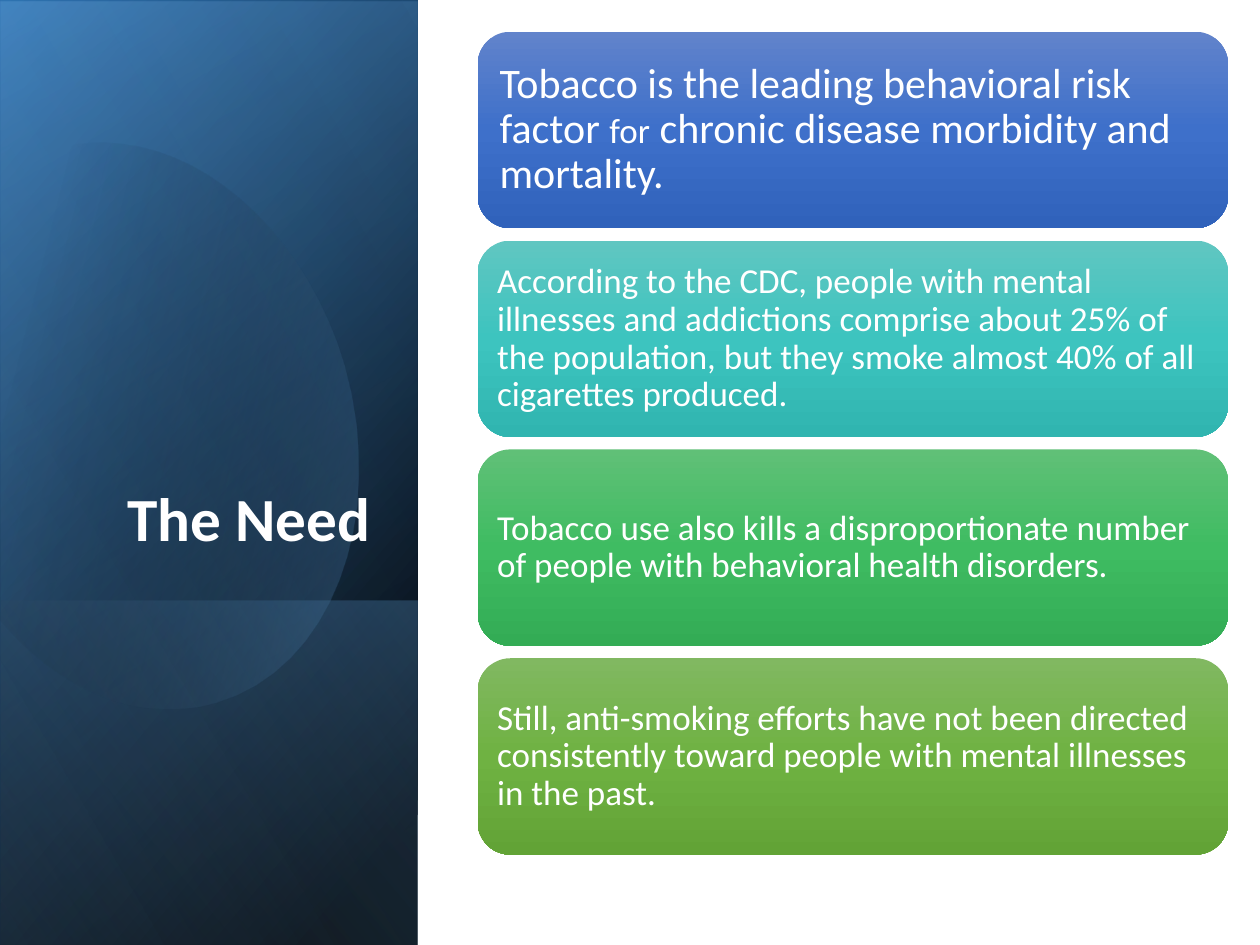
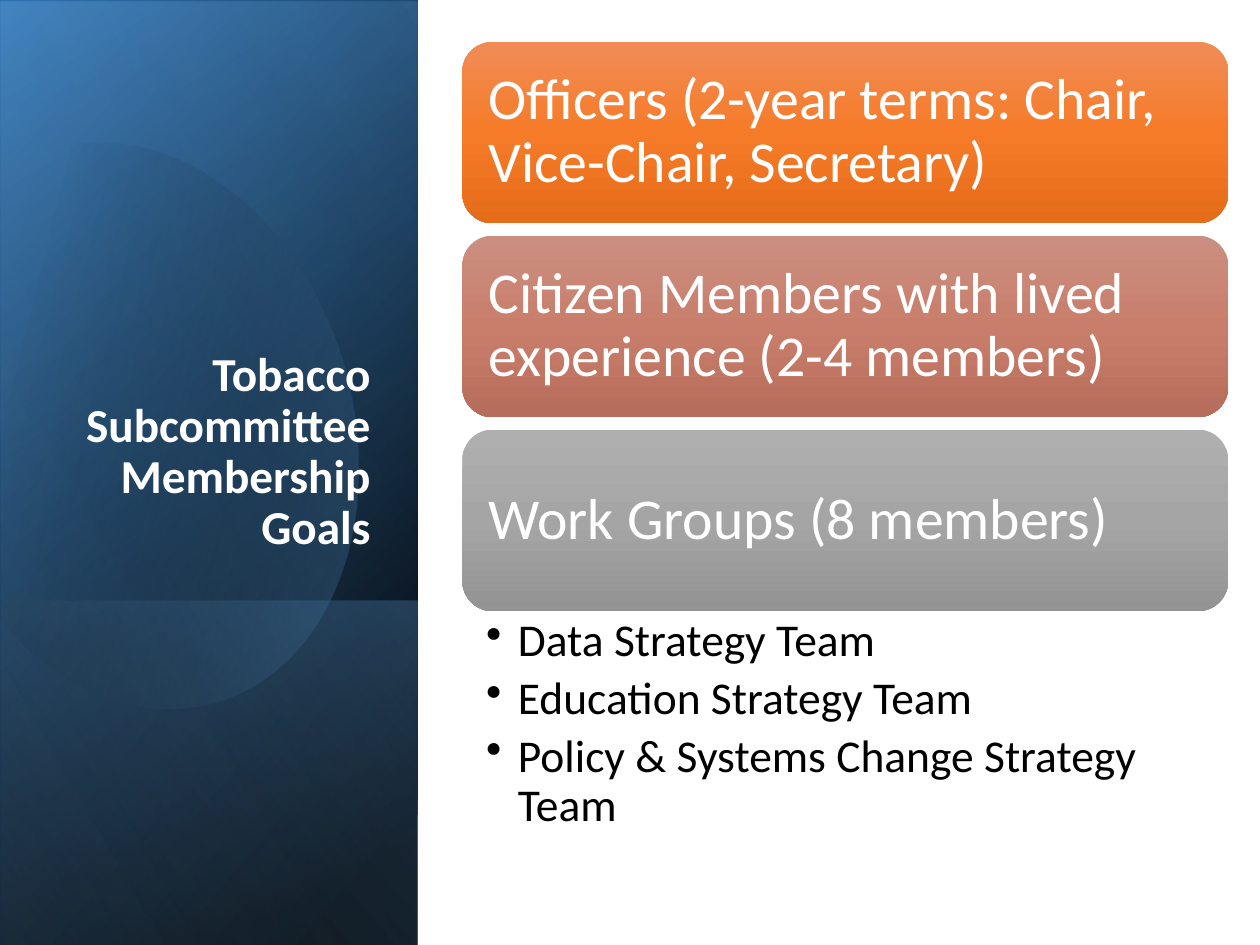
from math import cos, radians, sin

from lxml import etree
from pptx import Presentation
from pptx.dml.color import RGBColor
from pptx.enum.shapes import MSO_SHAPE
from pptx.enum.text import MSO_ANCHOR, PP_ALIGN
from pptx.oxml.ns import qn
from pptx.util import Cm, Pt

RECTANGLE, ROUNDED = MSO_SHAPE.RECTANGLE, MSO_SHAPE.ROUNDED_RECTANGLE
TOP, MIDDLE, BOTTOM = MSO_ANCHOR.TOP, MSO_ANCHOR.MIDDLE, MSO_ANCHOR.BOTTOM
LEFT, RIGHT = PP_ALIGN.LEFT, PP_ALIGN.RIGHT

FONT = "Calibri"
BLACK = RGBColor(0x00, 0x00, 0x00)
WHITE = RGBColor(0xFF, 0xFF, 0xFF)
DEEP_BLUE = RGBColor(0x2E, 0x75, 0xB6)
BLUE = RGBColor(0x5B, 0x9B, 0xD5)
PALE_BLUE = RGBColor(0x9D, 0xC3, 0xE6)

# Card colours: top, middle, bottom
ROYAL = RGBColor(0x61, 0x83, 0xCB), RGBColor(0x3E, 0x70, 0xCA), RGBColor(0x30, 0x62, 0xBB)
TEAL = RGBColor(0x60, 0xC6, 0xC1), RGBColor(0x3D, 0xC4, 0xBF), RGBColor(0x30, 0xB5, 0xB0)
GREEN = RGBColor(0x60, 0xC0, 0x77), RGBColor(0x3F, 0xBC, 0x62), RGBColor(0x33, 0xAC, 0x55)
OLIVE = RGBColor(0x81, 0xB8, 0x61), RGBColor(0x6F, 0xB2, 0x42), RGBColor(0x62, 0xA3, 0x36)
ORANGE = RGBColor(0xF1, 0x8C, 0x57), RGBColor(0xF6, 0x7B, 0x28), RGBColor(0xE5, 0x6C, 0x19)
ROSE = RGBColor(0xCB, 0x8F, 0x81), RGBColor(0xC9, 0x7E, 0x6B), RGBColor(0xB7, 0x6D, 0x5B)
GREY = RGBColor(0xAF, 0xAF, 0xAF), RGBColor(0xA5, 0xA5, 0xA5), RGBColor(0x93, 0x93, 0x93)

# Content: a card's text is a list of (words, size) runs; lengths are in cm
SLIDES = [
    dict(
        title="The Need", title_size=35,
        left=9.63, top=0.64, height=3.96,
        cards=[
            (ROYAL, 0.25, [("Tobacco is the leading behavioral risk factor ", 24), ("for", 20),
                           (" chronic disease morbidity and mortality.", 24)]),
            (TEAL, 0.2, [("According to the CDC, people with mental illnesses and addictions "
                          "comprise about 25% of the population, but they smoke almost 40% "
                          "of all cigarettes produced.", 20)]),
            (GREEN, 0.2, [("Tobacco use also kills a disproportionate number of people with "
                           "behavioral health disorders.", 20)]),
            (OLIVE, 0.2, [("Still, anti-smoking efforts have not been directed consistently "
                           "toward people with mental illnesses in the past.", 20)]),
        ],
        bullets=[],
    ),
    dict(
        title="Tobacco Subcommittee Membership Goals", title_size=27,
        left=9.32, top=0.84, height=3.66,
        cards=[
            (ORANGE, 0.35, [("Officers (2-year terms: Chair, Vice-Chair, Secretary)", 33)]),
            (ROSE, 0.35, [("Citizen Members with lived experience (2-4 members)", 33)]),
            (GREY, 0.35, [("Work Groups (8 members)", 33)]),
        ],
        bullets=["Data Strategy Team", "Education Strategy Team",
                 "Policy & Systems Change Strategy Team"],
    ),
]

# Side panel: box, gradient angle, stops of (position, colour, opacity) in percent
FULL_PANEL = (-5.31, 5.31, 19.05, 8.41)
PANEL_LAYERS = [
    (FULL_PANEL, 50, [(8, BLACK, 100), (100, DEEP_BLUE, 100)]),
    ((-5.31, 5.36, 19.05, 8.41), 30, [(0, BLACK, 0), (99, BLUE, 46)]),
    ((0.74, 11.38, 6.96, 8.41), 130, [(2, BLUE, 29), (100, BLACK, 30)]),
]
PANEL_GLAZE = (FULL_PANEL, 120, [(0, BLACK, 0), (99, PALE_BLUE, 11)])

# Oval outline: one point is a straight line, three points are a curve
OVAL_STOPS = [(29, BLACK, 0), (100, BLUE, 43)]
OVAL_TURN = 343.9
OVAL_CENTRE = (3.02, 8.5)
OVAL_START = (2.44, 2.9)
OVAL_SEGMENTS = [
    [(4.34, 3.1), (6.2, 4.88), (6.93, 7.37)],
    [(7.8, 10.46), (6.65, 13.49), (4.34, 14.15)],
    [(2.9, 14.58), (1.35, 13.97), (0.18, 12.7)],
    [(-0.08, 12.4)],
    [(-0.64, 4.22)],
    [(-0.38, 3.91)],
    [(0.05, 3.48), (0.56, 3.18), (1.14, 3.0)],
    [(1.57, 2.87), (2.01, 2.84), OVAL_START],
]
CURVE_STEPS = 16

CARD_RIGHT = 24.76
CARD_GAP = 0.25
BULLET_INDENT = 0.64


def paint(shape, angle, stops):
    """Fill with a linear gradient, without outline or shadow."""
    shape.shadow.inherit = False
    shape.line.fill.background()
    shape.fill.gradient()
    shape.fill.gradient_angle = 360 - angle
    stop_list = shape.fill._xPr.find(".//" + qn("a:gsLst"))
    stop_list.clear()
    for position, colour, opacity in stops:
        stop = etree.SubElement(stop_list, qn("a:gs"), pos=str(position * 1000))
        rgb = etree.SubElement(stop, qn("a:srgbClr"), val=str(colour))
        if opacity < 100:
            etree.SubElement(rgb, qn("a:alpha"), val=str(opacity * 1000))


def write(shape, paragraphs, colour=WHITE, bold=False, align=LEFT, anchor=MIDDLE,
          insets=(0.25, 0.13, 0.25, 0.13), space_after=0, bullet=False):
    """Write paragraphs, each a list of (words, size) runs."""
    frame = shape.text_frame
    frame.word_wrap = True
    frame.vertical_anchor = anchor
    (frame.margin_left, frame.margin_top,
     frame.margin_right, frame.margin_bottom) = map(Cm, insets)
    for number, runs in enumerate(paragraphs):
        paragraph = frame.add_paragraph() if number else frame.paragraphs[0]
        paragraph.alignment = align
        paragraph.line_spacing = 0.9
        paragraph.space_after = Pt(space_after)
        if bullet:
            paragraph.level = 1
            props = paragraph._p.get_or_add_pPr()
            props.set("marL", str(Cm(BULLET_INDENT)))
            props.set("indent", str(-Cm(BULLET_INDENT)))
            etree.SubElement(props, qn("a:buChar"), char="•")
        for words, size in runs:
            run = paragraph.add_run()
            run.text = words
            run.font.name = FONT
            run.font.size = Pt(size)
            run.font.bold = bold
            run.font.color.rgb = colour


def add_panel_layer(slide, box, angle, stops):
    layer = slide.shapes.add_shape(RECTANGLE, *map(Cm, box))
    layer.rotation = 90
    layer._element.spPr.find(qn("a:xfrm")).set("flipH", "1")
    paint(layer, angle, stops)


def oval_outline():
    """Turn the segments into points that follow the curves."""
    points = [OVAL_START]
    for segment in OVAL_SEGMENTS:
        if len(segment) == 1:
            points += segment
            continue
        controls = [points[-1], *segment]
        for step in range(1, CURVE_STEPS + 1):
            t = step / CURVE_STEPS
            weights = ((1 - t) ** 3, 3 * t * (1 - t) ** 2, 3 * t * t * (1 - t), t ** 3)
            points.append(tuple(sum(w * point[axis] for w, point in zip(weights, controls))
                                for axis in (0, 1)))
    return points


def add_oval(slide):
    # The outline is turned back first, so that the shape's rotation restores it
    turn = radians(-OVAL_TURN)
    centre_x, centre_y = OVAL_CENTRE
    points = []
    for x, y in oval_outline():
        dx, dy = x - centre_x, y - centre_y
        points.append((Cm(centre_x + dx * cos(turn) - dy * sin(turn)),
                       Cm(centre_y + dx * sin(turn) + dy * cos(turn))))
    builder = slide.shapes.build_freeform(*points[0])
    builder.add_line_segments(points[1:], close=True)
    oval = builder.convert_to_shape()
    oval.rotation = OVAL_TURN
    paint(oval, 30, OVAL_STOPS)


def add_side_panel(slide, title, title_size):
    for layer in PANEL_LAYERS:
        add_panel_layer(slide, *layer)
    add_oval(slide)
    add_panel_layer(slide, *PANEL_GLAZE)
    heading = slide.shapes.add_textbox(Cm(1.22), Cm(4.67), Cm(6.5), Cm(6.65))
    write(heading, [[(title, title_size)]], bold=True, align=RIGHT, anchor=BOTTOM)


def add_cards(slide, left, top, height, cards, bullets):
    width = CARD_RIGHT - left
    for colours, inset, runs in cards:
        card = slide.shapes.add_shape(ROUNDED, Cm(left), Cm(top), Cm(width), Cm(height))
        paint(card, 90, [(at, colour, 100) for at, colour in zip((0, 50, 100), colours)])
        write(card, [runs], insets=[inset] * 4)
        top += height + CARD_GAP
    if bullets:
        teams = slide.shapes.add_textbox(Cm(left), Cm(top - CARD_GAP), Cm(width), Cm(4.75))
        write(teams, [[(team, 26)] for team in bullets], colour=BLACK, anchor=TOP,
              insets=(0.48, 0.13, 0.66, 0.13), space_after=5, bullet=True)


def main():
    deck = Presentation()
    deck.slide_width, deck.slide_height = Cm(25.4), Cm(19.05)
    for content in SLIDES:
        slide = deck.slides.add_slide(deck.slide_layouts[6])
        add_side_panel(slide, content["title"], content["title_size"])
        add_cards(slide, content["left"], content["top"], content["height"],
                  content["cards"], content["bullets"])
    deck.save("out.pptx")


if __name__ == "__main__":
    main()
